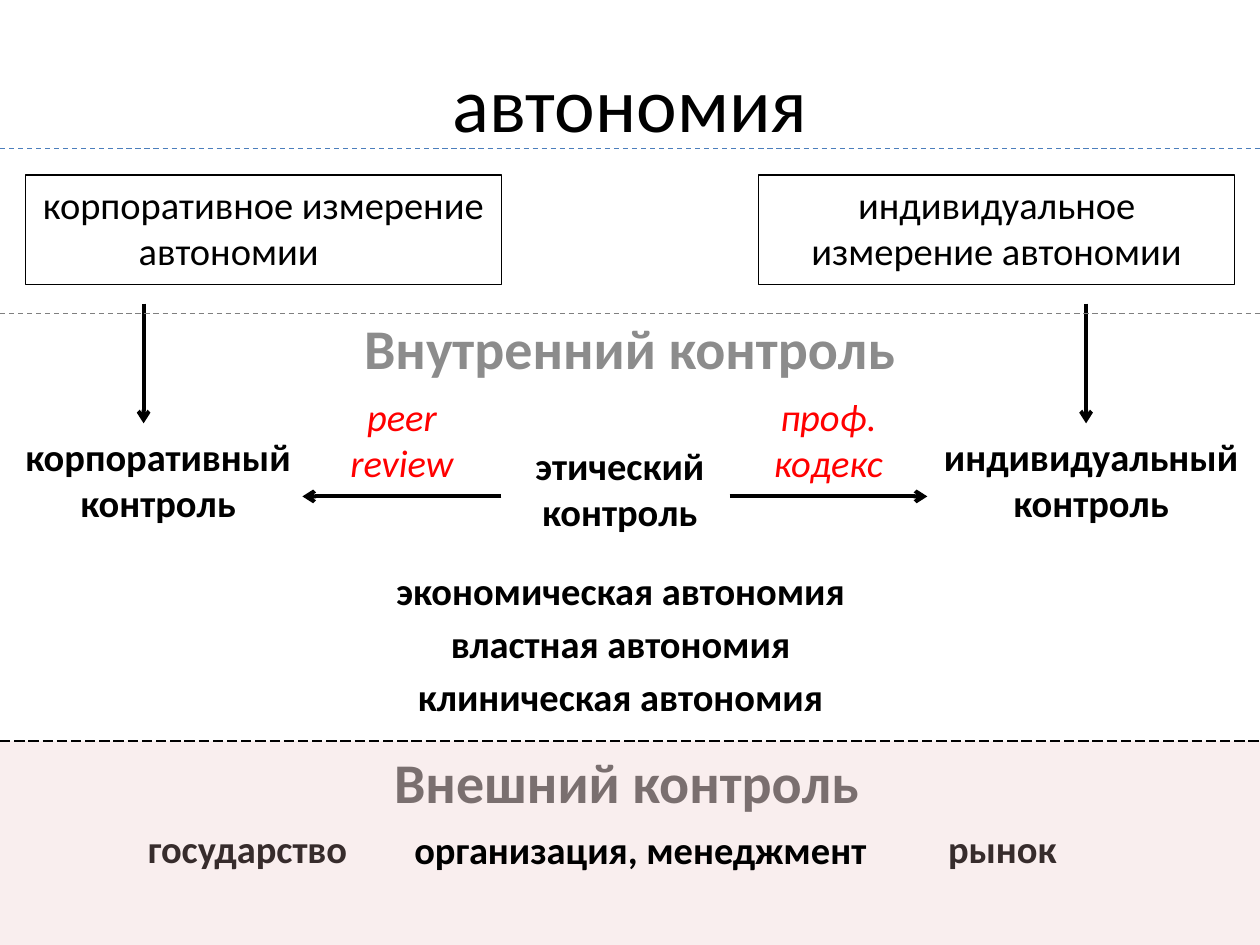
from dataclasses import dataclass

from lxml.etree import SubElement
from pptx import Presentation
from pptx.dml.color import RGBColor
from pptx.enum.dml import MSO_LINE
from pptx.enum.shapes import MSO_CONNECTOR, MSO_SHAPE
from pptx.enum.text import MSO_ANCHOR, PP_ALIGN
from pptx.oxml.ns import qn
from pptx.util import Pt

SCALE = 9144  # EMU per px, 100 px to the inch
WIDTH, HEIGHT = 1000, 750


@dataclass(frozen=True)
class Theme:
    font: str = "Calibri"
    title_size: int = 44
    heading_size: int = 32
    body_size: int = 22
    black: str = "000000"
    white: str = "FFFFFF"
    inner_grey: str = "8C8C8C"
    outer_grey: str = "595959"
    red: str = "FF0000"
    blue: str = "4B7EBC"
    rule_grey: str = "7F7F7F"
    pink: str = "E6B9B8"
    pink_alpha: int = 24000
    thin: float = 0.75
    thick: float = 2.25


THEME = Theme()


def px(value):
    return int(value * SCALE)


def rgb(value):
    return RGBColor.from_string(value)


def style(paragraph, size=THEME.body_size, color=THEME.black, bold=False, italic=False,
          align=PP_ALIGN.CENTER):
    paragraph.alignment = align
    font = paragraph.font
    font.name, font.size = THEME.font, Pt(size)
    font.bold, font.italic = bold, italic
    font.color.rgb = rgb(color)


def add_text(slide, text, left, top, width, height, wrap=True, **look):
    box = slide.shapes.add_textbox(px(left), px(top), px(width), px(height))
    box.text_frame.word_wrap = wrap
    paragraph = box.text_frame.paragraphs[0]
    paragraph.text = text
    style(paragraph, **look)


def add_line(slide, start, end, color=THEME.black, width=THEME.thin, dash=None, arrow=False):
    connector = slide.shapes.add_connector(
        MSO_CONNECTOR.STRAIGHT, *(px(value) for value in (*start, *end)))
    connector.line.color.rgb = rgb(color)
    connector.line.width = Pt(width)
    if dash:
        connector.line.dash_style = dash
    properties = connector._element.spPr
    if arrow:
        SubElement(properties.find(qn("a:ln")), qn("a:tailEnd"), type="arrow")
    SubElement(properties, qn("a:effectLst"))


def add_rule(slide, top, color, dash):
    add_line(slide, (0, top), (WIDTH, top), color, dash=dash)


def add_arrow(slide, start, end):
    add_line(slide, start, end, width=THEME.thick, arrow=True)


def add_title(slide, left, top, width, height):
    title = slide.shapes.title
    title.left, title.top, title.width, title.height = map(px, (left, top, width, height))
    title.text_frame.text = "автономия"
    title.text_frame.vertical_anchor = MSO_ANCHOR.MIDDLE
    style(title.text_frame.paragraphs[0], THEME.title_size)


def add_dimension(slide, left, top, lines, last_indent=0):
    """Outlined box; last_indent shifts its last line to the left."""
    box = slide.shapes.add_shape(MSO_SHAPE.RECTANGLE, px(left), px(top), px(378), px(87))
    box.shadow.inherit = False
    box.fill.solid()
    box.fill.fore_color.rgb = rgb(THEME.white)
    box.line.color.rgb = rgb(THEME.black)
    box.line.width = Pt(THEME.thin)
    frame = box.text_frame
    frame.word_wrap = True
    frame.vertical_anchor = MSO_ANCHOR.TOP
    frame.text = "\n".join(lines)
    for paragraph in frame.paragraphs:
        style(paragraph)
    if last_indent:
        frame.paragraphs[-1]._p.get_or_add_pPr().set("marR", str(px(last_indent)))


def add_autonomy_table(slide, left, top, width, row_heights):
    rows = ("экономическая автономия", "властная автономия", "клиническая автономия")
    table = slide.shapes.add_table(
        len(rows), 1, px(left), px(top), px(width), px(sum(row_heights))).table
    table.first_row = table.horz_banding = False
    for index, (text, height) in enumerate(zip(rows, row_heights)):
        table.rows[index].height = px(height)
        cell = table.cell(index, 0)
        cell.fill.solid()
        cell.fill.fore_color.rgb = rgb(THEME.white)
        cell.margin_left = cell.margin_right = px(7)
        cell.margin_top = cell.margin_bottom = 0
        cell.text = text
        paragraph = cell.text_frame.paragraphs[0]
        paragraph.line_spacing = 1.15
        style(paragraph, bold=True)


def add_dimensions(slide, top):
    add_dimension(slide, 20, top, ("корпоративное измерение", "автономии"), last_indent=55)
    add_dimension(slide, 602, top, ("индивидуальное измерение автономии",))
    for center in (114, 862):
        add_arrow(slide, (center, top + 102), (center, top + 197))


def add_inner_control(slide, top):
    add_text(slide, "Внутренний контроль", 150, top, 700, 64,
             size=THEME.heading_size, color=THEME.inner_grey, bold=True)
    for text, left, offset, width in (
        ("корпоративный контроль", 0, 95, 251),
        ("этический контроль", 382, 102, 220),
        ("индивидуальный контроль", 732, 95, 268),
    ):
        add_text(slide, text, left, top + offset, width, 87, bold=True)
    # Means of control, above the arrows that lead outwards
    for text, left, width in (("peer review", 256, 126), ("проф. кодекс", 571, 173)):
        add_text(slide, text, left, top + 63, width, 79, color=THEME.red, italic=True)
    for start, end in ((398, 240), (579, 736)):
        add_arrow(slide, (start, top + 150), (end, top + 150))
    add_autonomy_table(slide, 209, top + 202, 567, (28, 28, 55))


def add_outer_control(slide, top):
    add_text(slide, "Внешний контроль", 303, top, 393, 64, wrap=False, align=PP_ALIGN.LEFT,
             size=THEME.heading_size, color=THEME.outer_grey, bold=True)
    for text, left in (("государство", 43), ("рынок", 642)):
        add_text(slide, text, left, top + 62, 307, 100, bold=True)
    # Translucent band tints the texts beneath it
    band = slide.shapes.add_shape(
        MSO_SHAPE.RECTANGLE, 0, px(top), px(WIDTH), px(HEIGHT - top))
    band.shadow.inherit = False
    band.line.fill.background()
    band.fill.solid()
    band.fill.fore_color.rgb = rgb(THEME.pink)
    color = band._element.spPr.find(qn("a:solidFill"))[0]
    SubElement(color, qn("a:alpha"), val=str(THEME.pink_alpha))
    add_text(slide, "организация, менеджмент", 319, top + 63, 384, 47, wrap=False,
             align=PP_ALIGN.LEFT, bold=True)


def main():
    presentation = Presentation()
    presentation.slide_width, presentation.slide_height = px(WIDTH), px(HEIGHT)
    slide = presentation.slides.add_slide(presentation.slide_layouts[5])
    add_title(slide, 75, 0, 850, 161)
    add_dimensions(slide, 139)
    add_inner_control(slide, 244)
    add_outer_control(slide, 588)
    # Dashed rules between the levels
    add_rule(slide, 118, THEME.blue, MSO_LINE.DASH)
    add_rule(slide, 249, THEME.rule_grey, MSO_LINE.DASH)
    add_rule(slide, 588, THEME.black, MSO_LINE.LONG_DASH)
    presentation.save("out.pptx")


if __name__ == "__main__":
    main()
